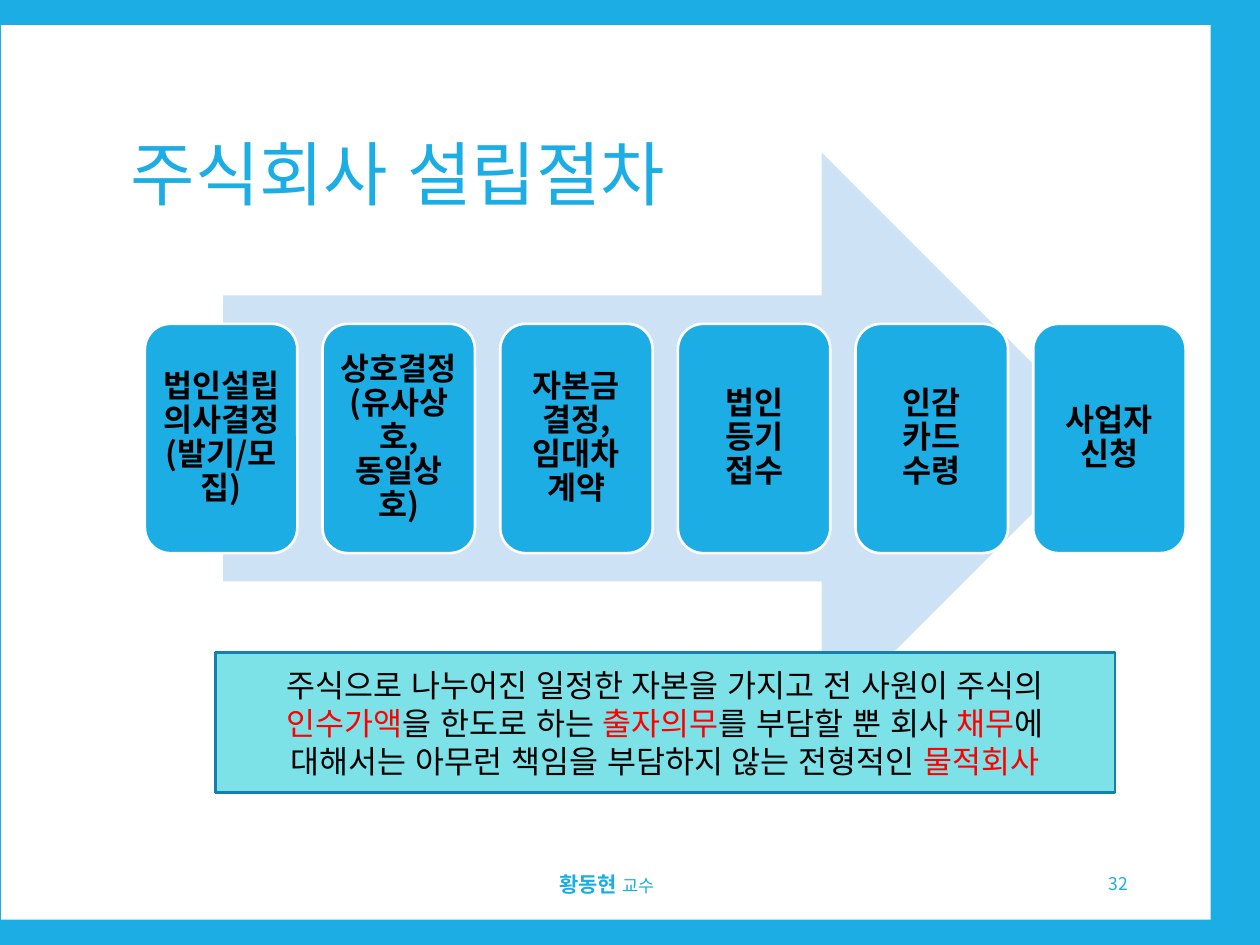
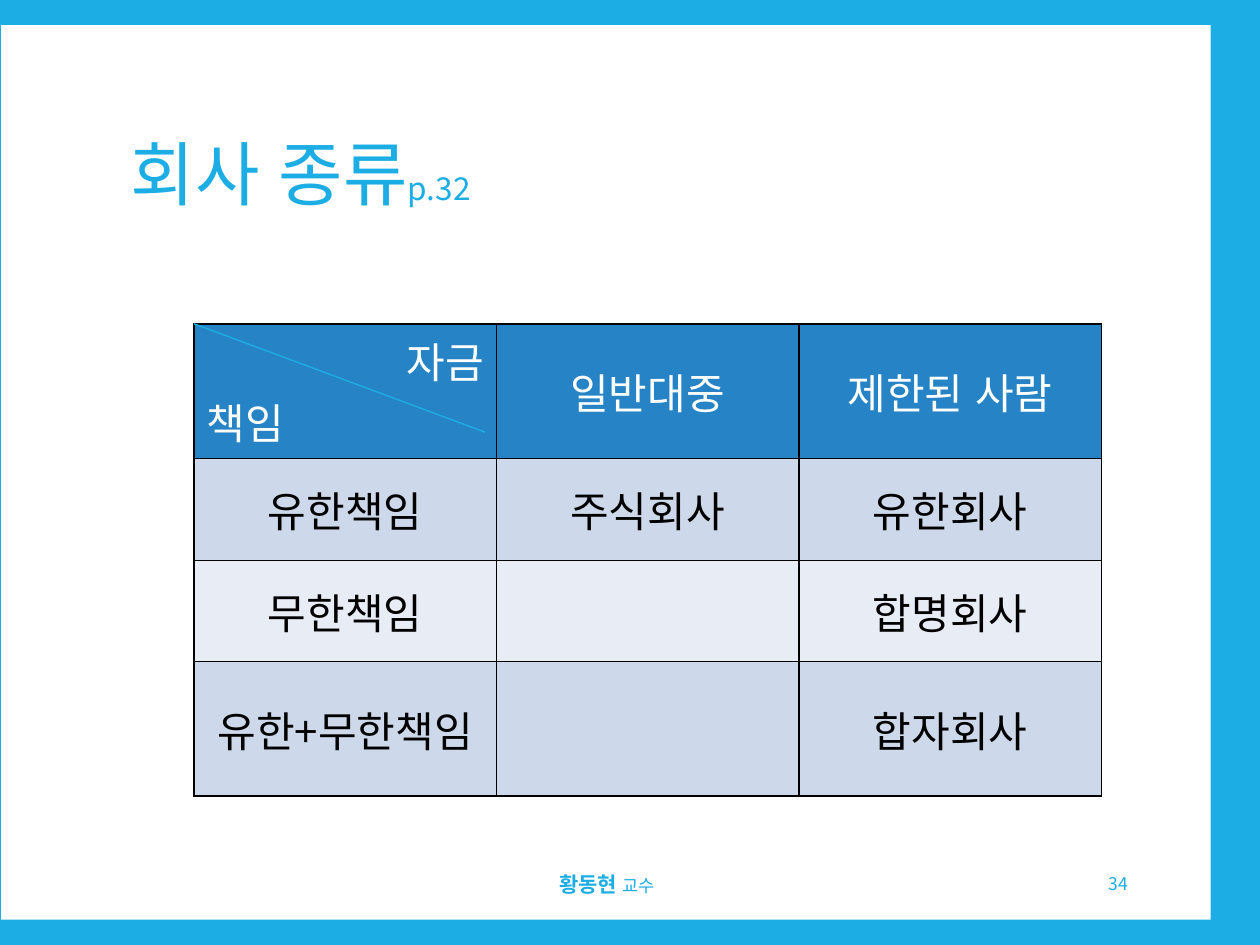
from lxml import etree
from pptx import Presentation
from pptx import util as u
from pptx.dml.color import RGBColor
from pptx.enum import lang, shapes, text
from pptx.oxml import ns

FONT = "Noto Sans CJK KR"
BLUE, WHITE, BLACK, RED = "1CADE4", "FFFFFF", "000000", "FF0000"
ARROW_BLUE, CALLOUT_FILL, CALLOUT_EDGE = "CDE3F5", "7DE2E7", "1580A9"
HEADER_FILL, ROW_FILLS = "2683C6", ("CDD9EA", "E8EDF5")

LEFT, CENTER, RIGHT = (text.PP_ALIGN.LEFT, text.PP_ALIGN.CENTER,
                       text.PP_ALIGN.RIGHT)
MIDDLE, TOP = text.MSO_ANCHOR.MIDDLE, text.MSO_ANCHOR.TOP

STEPS = [
    ["법인설립의사결정(발기/모집)"],
    ["상호결정(유사상호,동일상호)"],
    ["자본금", "결정,", "임대차", "계약"],
    ["법인", "등기", "접수"],
    ["인감", "카드", "수령"],
    ["사업자", "신청"],
]
DEFINITION = [
    "주식으로 나누어진 일정한 자본을 가지고 전 사원이 주식의 ",
    ("인수가액", {"color": RED}),
    "을 한도로 하는 ",
    ("출자의무", {"color": RED}),
    "를 부담할 뿐 회사 ",
    ("채무", {"color": RED}),
    "에 대해서는 아무런 책임을 부담하지 않는 전형적인 ",
    ("물적회사", {"color": RED}),
]
COMPANY_TYPES = [
    ["", "일반대중", "제한된 사람"],
    ["유한책임", "주식회사", "유한회사"],
    ["무한책임", "", "합명회사"],
    ["유한+무한책임", "", "합자회사"],
]


def rgb(hex_color):
    return RGBColor.from_string(hex_color)


def inches(*lengths):
    return [u.Inches(length) for length in lengths]


def paint(target, hex_color):
    target.fill.solid()
    target.fill.fore_color.rgb = rgb(hex_color)


def add_run(paragraph, content, size=18, color=BLACK, bold=False):
    run = paragraph.add_run()
    run.text = content
    run.font.size = u.Pt(size)
    run.font.bold = bold
    run.font.name = FONT
    run.font.color.rgb = rgb(color)
    run.font.language_id = lang.MSO_LANGUAGE_ID.KOREAN
    east_asian = etree.Element(ns.qn("a:ea"), typeface=FONT)
    run.font._element.find(ns.qn("a:latin")).addnext(east_asian)


def write(frame, paragraphs, align=LEFT, spacing=1.0, **font):
    """Fill a frame; a paragraph is a string or a list of runs.

    A run is a string or a pair of a string and its own font settings.
    """
    for index, runs in enumerate(paragraphs):
        paragraph = frame.add_paragraph() if index else frame.paragraphs[0]
        paragraph.alignment = align
        paragraph.line_spacing = spacing
        for run in [runs] if isinstance(runs, str) else runs:
            content, own = (run, {}) if isinstance(run, str) else run
            add_run(paragraph, content, **{**font, **own})


def add_text(slide, box, paragraphs, **formatting):
    frame = slide.shapes.add_textbox(*inches(*box)).text_frame
    frame.word_wrap = True
    frame.vertical_anchor = MIDDLE
    write(frame, paragraphs, **formatting)


def add_block(slide, kind, box, fill, edge=None):
    block = slide.shapes.add_shape(kind, *inches(*box))
    block.shadow.inherit = False
    paint(block, fill)
    if edge:
        block.line.color.rgb = rgb(edge)
        block.line.width = u.Pt(1.5)
    else:
        block.line.fill.background()
    block.text_frame.word_wrap = True
    block.text_frame.vertical_anchor = MIDDLE
    return block


def add_line(slide, start, end, color, width):
    line = slide.shapes.add_connector(
        shapes.MSO_CONNECTOR.STRAIGHT, *inches(*start, *end))
    line.line.color.rgb = rgb(color)
    line.line.width = u.Pt(width)
    etree.SubElement(line._element.spPr, ns.qn("a:effectLst"))


def add_page(deck, title, number):
    """Add a slide with the blue surround, title, footer and page number."""
    slide = deck.slides.add_slide(deck.slide_layouts[6])
    paint(slide.background, BLUE)
    add_block(slide, shapes.MSO_SHAPE.RECTANGLE, (0.01, 0.2, 9.6, 7.1), WHITE)
    add_text(slide, (3.86, 6.82, 1.91, 0.4),
             [[("황동현", {"size": 12, "bold": True}), " 교수"]],
             align=CENTER, size=10, color=BLUE)
    add_text(slide, (0.94, 0.67, 8.1, 1.48), [title],
             spacing=0.9, size=40, color=BLUE)
    add_text(slide, (7.65, 6.81, 1.4, 0.4), [str(number)],
             align=RIGHT, size=10, color=BLUE)
    return slide


def add_steps(slide, left, top, pitch):
    for index, lines in enumerate(STEPS):
        step = add_block(slide, shapes.MSO_SHAPE.ROUNDED_RECTANGLE,
                         (left + index * pitch, top, 1.21, 1.82), BLUE, WHITE)
        frame = step.text_frame
        frame.margin_left = frame.margin_right = u.Inches(0.07)
        frame.margin_top = frame.margin_bottom = u.Inches(0.07)
        write(frame, lines, align=CENTER, spacing=0.9, bold=True)


def set_borders(cell, color, width):
    properties = cell._tc.get_or_add_tcPr()
    for index, side in enumerate(("lnL", "lnR", "lnT", "lnB")):
        border = etree.Element(ns.qn("a:" + side), w=str(u.Pt(width)))
        fill = etree.SubElement(border, ns.qn("a:solidFill"))
        etree.SubElement(fill, ns.qn("a:srgbClr"), val=color)
        properties.insert(index, border)


def add_company_table(slide, left, top):
    row_heights = (1.07, 0.81, 0.8, 1.07)
    table = slide.shapes.add_table(
        len(COMPANY_TYPES), 3,
        *inches(left, top, 7.2, sum(row_heights))).table
    for row, height in zip(table.rows, row_heights):
        row.height = u.Inches(height)
    for column in table.columns:
        column.width = u.Inches(2.4)
    for r, labels in enumerate(COMPANY_TYPES):
        for c, label in enumerate(labels):
            cell = table.cell(r, c)
            paint(cell, ROW_FILLS[(r - 1) % 2] if r else HEADER_FILL)
            set_borders(cell, BLACK, 1)
            cell.vertical_anchor = MIDDLE
            if label:
                write(cell.text_frame, [label], align=CENTER, size=24,
                      color=BLACK if r else WHITE)
    corner = table.cell(0, 0)
    corner.vertical_anchor = TOP
    write(corner.text_frame, ["자금", "책임"], size=24, color=WHITE)
    corner.text_frame.paragraphs[0].alignment = RIGHT


def add_procedure_slide(deck):
    slide = add_page(deck, "주식회사 설립절차", 32)
    add_block(slide, shapes.MSO_SHAPE.RIGHT_ARROW,
              (1.77, 1.21, 7.02, 4.54), ARROW_BLUE)
    add_steps(slide, left=1.15, top=2.57, pitch=1.41)
    definition = add_block(slide, shapes.MSO_SHAPE.RECTANGLE,
                           (1.71, 5.18, 7.14, 1.11),
                           CALLOUT_FILL, CALLOUT_EDGE)
    write(definition.text_frame, [DEFINITION], align=CENTER)


def add_types_slide(deck):
    slide = add_page(deck, ["회사 종류", ("p.32", {"size": 18})], 34)
    left, top = 1.54, 2.57
    add_company_table(slide, left, top)
    add_line(slide, (left, top), (3.85, 3.43), BLUE, 0.79)


def main():
    deck = Presentation()
    deck.slide_width, deck.slide_height = inches(10, 7.5)
    add_procedure_slide(deck)
    add_types_slide(deck)
    deck.save("out.pptx")


if __name__ == "__main__":
    main()
